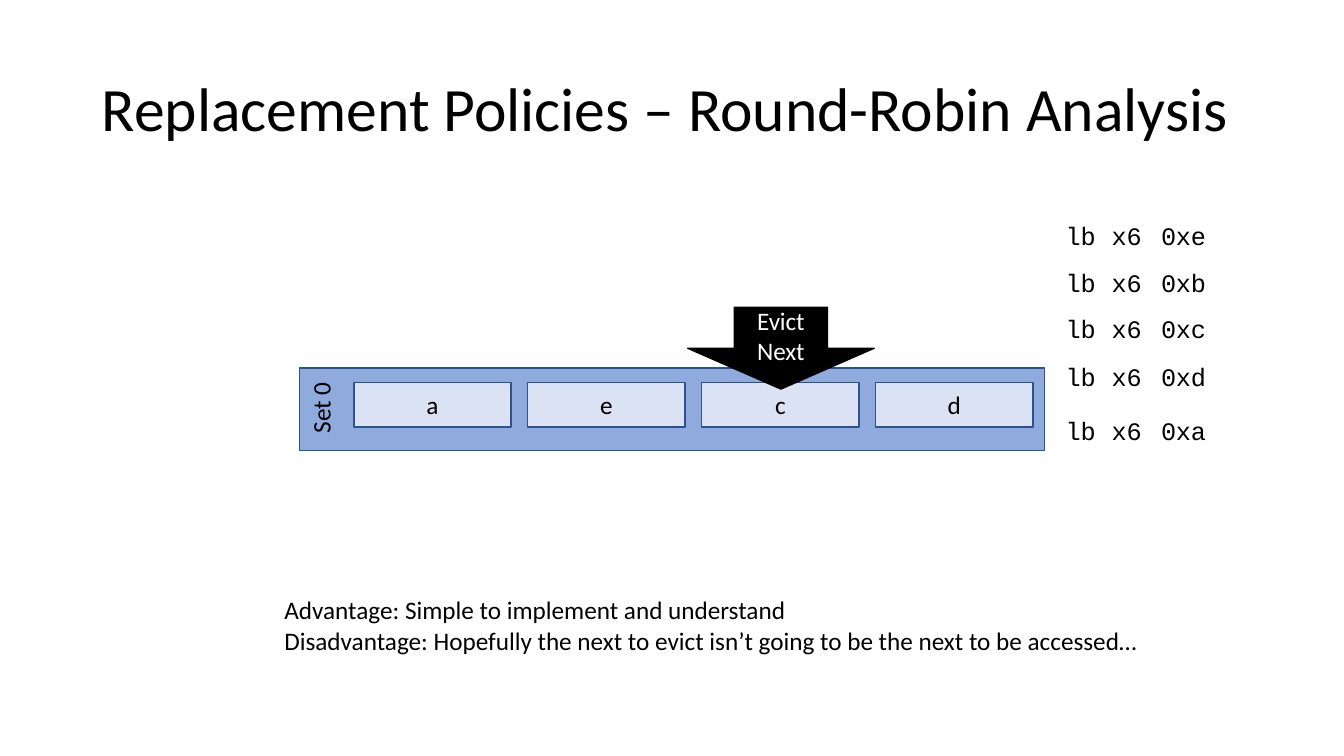
from pptx import Presentation
from pptx import util as u
from pptx.dml.color import RGBColor
from pptx.enum import shapes, text

COLUMNS, ROWS = 133.3, 75  # grid cells of a tenth of an inch
BLACK, WHITE = "000000", "FFFFFF"
SET_FILL, BLOCK_FILL, BLUE_LINE = "8FAADC", "DAE2F3", "2E528F"
LEFT, CENTER, RIGHT = text.PP_ALIGN.LEFT, text.PP_ALIGN.CENTER, text.PP_ALIGN.RIGHT


def color(hex_string):
    return RGBColor.from_string(hex_string)


def grid(cells):
    return u.Inches(cells / 10)


class SlideBuilder:
    def __init__(self, presentation):
        self.slide = presentation.slides.add_slide(presentation.slide_layouts[6])
        self.font = "Calibri"
        self.code_font = "Courier New"
        self.size = 18

    def set_text(self, frame, content, size=None, ink=BLACK, align=LEFT, font=None, tracking=0):
        """Fill a text frame; tracking is in hundredths of a point."""
        frame.text = content
        for paragraph in frame.paragraphs:
            paragraph.alignment = align
            for run in paragraph.runs:
                run.font.name = font or self.font
                run.font.size = u.Pt(size or self.size)
                run.font.color.rgb = color(ink)
                if tracking:
                    run._r.get_or_add_rPr().set("spc", str(tracking))

    def clear_margins(self, frame):
        frame.margin_left = frame.margin_right = frame.margin_top = frame.margin_bottom = 0

    def label(self, column, row, width, height, content, vertical=False, **style):
        box = self.slide.shapes.add_textbox(*map(grid, (column, row, width, height)))
        frame = box.text_frame
        frame.word_wrap = True
        self.clear_margins(frame)
        if vertical:
            frame._txBody.bodyPr.set("vert", "vert270")
        self.set_text(frame, content, **style)

    def shape(self, kind, column, row, width, height, fill, line, content=""):
        shape = self.slide.shapes.add_shape(kind, *map(grid, (column, row, width, height)))
        shape.shadow.inherit = False
        shape.fill.solid()
        shape.fill.fore_color.rgb = color(fill)
        shape.line.color.rgb = color(line)
        shape.line.width = u.Pt(1)
        if content:
            frame = shape.text_frame
            self.clear_margins(frame)
            frame.vertical_anchor = text.MSO_ANCHOR.MIDDLE
            self.set_text(frame, content, align=CENTER)

    def code_table(self, column, row, widths, heights, top_margins, lines):
        frame = self.slide.shapes.add_table(
            len(heights), len(widths),
            *map(grid, (column, row, sum(widths), sum(heights))))
        table = frame.table
        table.first_row = table.horz_banding = False
        for table_column, width in zip(table.columns, widths):
            table_column.width = grid(width)
        for table_row, height, top, line in zip(table.rows, heights, top_margins, lines):
            table_row.height = grid(height)
            for cell, word, align in zip(table_row.cells, line.split(), (LEFT, CENTER, RIGHT)):
                cell.fill.background()
                self.clear_margins(cell)
                cell.margin_top = grid(top)
                if align == LEFT:
                    cell.margin_left = grid(0.3)
                self.set_text(cell.text_frame, word, align=align,
                              font=self.code_font, tracking=-20)


def main():
    presentation = Presentation()
    presentation.slide_width, presentation.slide_height = grid(COLUMNS), grid(ROWS)
    builder = SlideBuilder(presentation)
    rectangle = shapes.MSO_SHAPE.RECTANGLE

    builder.label(10.1, 6.9, 119.2, 8.4, "Replacement Policies – Round-Robin Analysis", size=44)

    builder.shape(rectangle, 29.7, 36.5, 73.9, 8.2, SET_FILL, BLUE_LINE)
    builder.label(30.3, 37.7, 2.8, 5.3, "Set 0", vertical=True)
    for index, block in enumerate("aecd"):
        builder.shape(rectangle, 35.1 + 17.25 * index, 37.95, 15.6, 4.4,
                      BLOCK_FILL, BLUE_LINE, block)

    builder.shape(shapes.MSO_SHAPE.DOWN_ARROW, 68.2, 30.5, 18.5, 8.1, BLACK, BLACK)
    builder.label(74.2, 30.3, 6.5, 6.3, "Evict\nNext", ink=WHITE, align=CENTER, tracking=-10)

    builder.label(28.2, 59, 90, 6.3,
                  "Advantage: Simple to implement and understand\n"
                  "Disadvantage: Hopefully the next to evict isn’t going to be "
                  "the next to be accessed…")

    builder.code_table(105.4, 22.3, widths=(4.1, 4.5, 5.6), heights=(4.1, 4.6, 4.7, 5.1, 4.4),
                       top_margins=(0, 0.5, 0.5, 0.6, 0.8),
                       lines=[f"lb x6 0x{address}" for address in "ebcda"])

    presentation.save("out.pptx")


if __name__ == "__main__":
    main()
